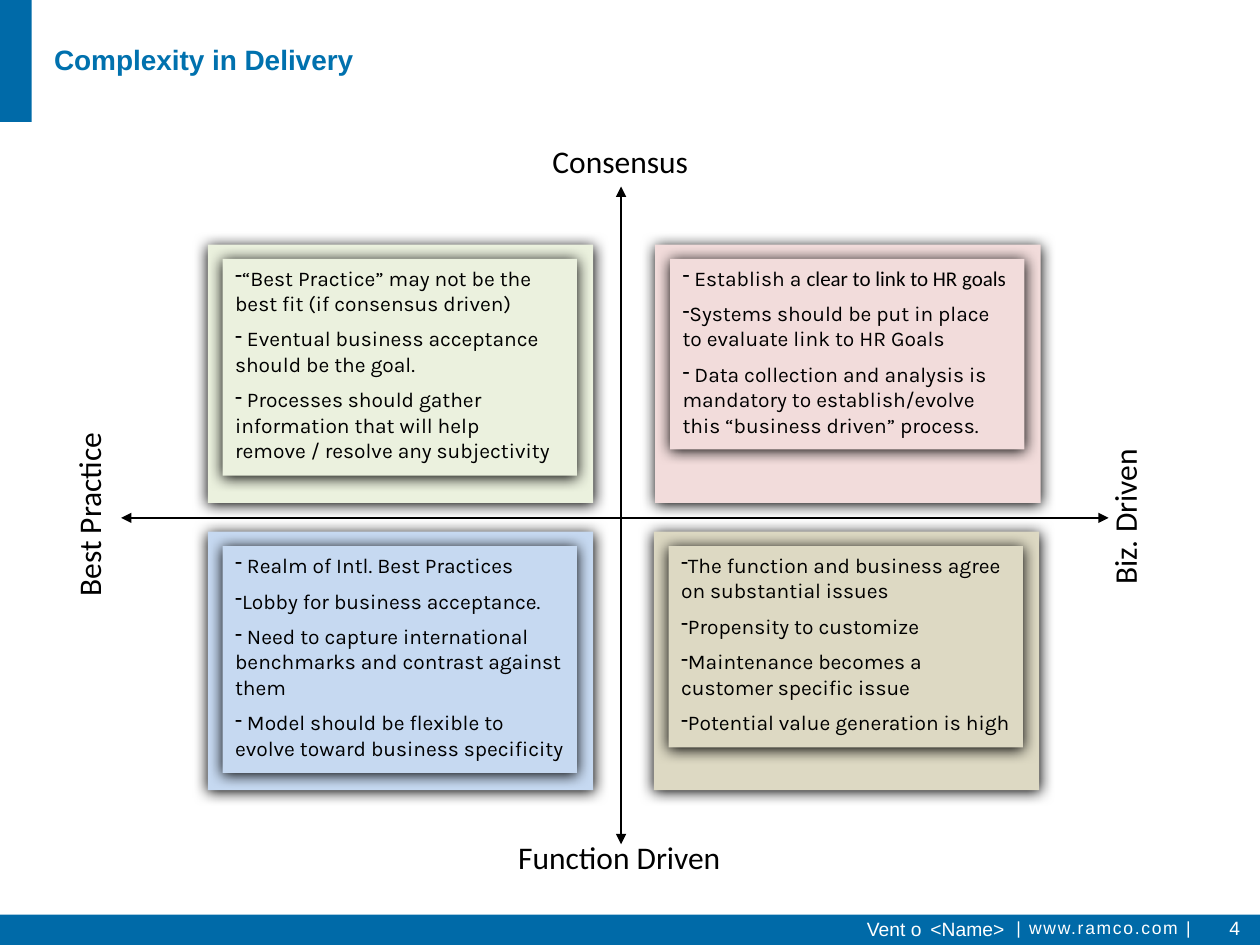
from dataclasses import dataclass

from lxml.etree import SubElement
from pptx import Presentation
from pptx.dml.color import RGBColor as Rgb
from pptx.enum.shapes import MSO_CONNECTOR as Connector, MSO_SHAPE as Shape
from pptx.enum.text import MSO_ANCHOR as Anchor, PP_ALIGN as Align
from pptx.oxml.ns import qn
from pptx.util import Cm, Pt


@dataclass(frozen=True)
class Theme:
    band = Rgb.from_string("006AA8")
    heading = Rgb.from_string("0071AE")
    white = Rgb.from_string("FFFFFF")
    black = Rgb.from_string("000000")
    green = Rgb.from_string("EBF1DE")
    pink = Rgb.from_string("F2DCDB")
    blue = Rgb.from_string("C6D9F1")
    tan = Rgb.from_string("DDD9C3")
    title_size = Pt(16)
    axis_size = Pt(18)
    body_size = Pt(12)
    footer_size = Pt(11)
    web_size = Pt(10)
    para_gap = Pt(6)


theme = Theme()


def add_span(para, text, font, size, color, bold=False, spacing=0):
    """Append one run; spacing is the letter spacing in points."""
    span = para.add_run()
    span.text = text
    span.font.name, span.font.size, span.font.bold = font, size, bold
    span.font.color.rgb = color
    if spacing:
        span.font._element.set("spc", str(spacing * 100))


def add_rect(shapes, left, top, width, height, color, shadow=False):
    """Add a borderless rectangle, with a soft shadow on request."""
    rect = shapes.add_shape(Shape.RECTANGLE, Cm(left), Cm(top), Cm(width), Cm(height))
    rect.fill.solid()
    rect.fill.fore_color.rgb = color
    rect.line.fill.background()
    rect.shadow.inherit = False
    if shadow:
        effects = rect.element.spPr.find(qn("a:effectLst"))
        outer = SubElement(effects, qn("a:outerShdw"), blurRad=str(Pt(8.5)),
                           dist=str(Pt(1)), dir="5400000", rotWithShape="0")
        SubElement(outer, qn("a:srgbClr"), val=str(theme.black))
    return rect


deck = Presentation()
deck.slide_width, deck.slide_height = Cm(25.4), Cm(19.05)
page = deck.slides.add_slide(deck.slide_layouts[6])

# Corner block and footer band
add_rect(page.shapes, 0, 0, 0.64, 2.46, theme.band)
add_rect(page.shapes, 0, 18.44, 25.4, 0.61, theme.band)

# Title, footer and axis labels: place, rotation, alignment, anchor, runs
footer = ("Arial", theme.footer_size, theme.white)
axis = ("Calibri", theme.axis_size, theme.black)
labels = [
    ((0.84, 0, 20.52, 2.41), 0, Align.LEFT, Anchor.MIDDLE,
     [("Complexity in Delivery", "Arial", theme.title_size, theme.heading, True)]),
    ((20.24, 18.36, 5.1, 0.74), 0, Align.LEFT, Anchor.TOP,
     [("| www.ramco.com |", "Arial", theme.web_size, theme.white, False, 1)]),
    ((14.58, 18.36, 5.92, 0.74), 0, Align.RIGHT, Anchor.TOP,
     [("Vent ", *footer), ("o ", *footer, False, 1), ("<Name>", *footer)]),
    ((24.18, 18.19, 1.07, 1.02), 0, Align.RIGHT, Anchor.MIDDLE, [("4", *footer)]),
    ((9.75, 2.74, 5.51, 1.02), 0, Align.CENTER, Anchor.TOP, [("Consensus", *axis)]),
    ((9.73, 16.76, 5.51, 1.02), 0, Align.CENTER, Anchor.TOP, [("Function Driven", *axis)]),
    ((-0.89, 9.86, 5.36, 1.02), 270, Align.CENTER, Anchor.TOP, [("Best Practice", *axis)]),
    ((19.99, 9.91, 5.36, 1.02), 270, Align.CENTER, Anchor.TOP, [("Biz. Driven", *axis)]),
]
for place, rotation, align, anchor, spans in labels:
    box = page.shapes.add_textbox(*map(Cm, place))
    box.rotation = rotation
    box.text_frame.word_wrap = True
    box.text_frame.vertical_anchor = anchor
    para = box.text_frame.paragraphs[0]
    para.alignment = align
    for span in spans:
        add_span(para, *span)

# Axes with an arrowhead at each end
for ends in [(2.44, 10.44, 22.35, 10.44), (12.52, 17.02, 12.52, 3.76)]:
    arrow = page.shapes.add_connector(Connector.STRAIGHT, *map(Cm, ends))
    arrow.line.color.rgb = theme.black
    arrow.line.width = Pt(0.75)
    line = arrow.element.spPr.find(qn("a:ln"))
    for end in ("a:headEnd", "a:tailEnd"):
        SubElement(line, qn(end), type="triangle")
    SubElement(arrow.element.spPr, qn("a:effectLst"))

# Quadrants: left, top, note height, colour, points (each a list of text and font)
quadrants = [
    (13.18, 10.72, 4.06, theme.tan, [
        [("The function and business agree on substantial issues", "Karla")],
        [("Propensity to customize", "Karla")],
        [("Maintenance becomes a customer specific issue", "Karla")],
        [("Potential value generation is high", "Karla")]]),
    (4.19, 10.72, 4.57, theme.blue, [
        [(" Realm of Intl. Best Practices", "Karla")],
        [("Lobby for business acceptance.", "Karla")],
        [(" Need to capture international benchmarks and contrast against them", "Karla")],
        [(" Model should be flexible to evolve toward business specificity", "Karla")]]),
    (4.19, 4.93, 4.37, theme.green, [
        [("“Best Practice” may not be the best fit (if consensus driven)", "Karla")],
        [(" Eventual business acceptance should be the goal.", "Karla")],
        [(" Processes should gather information that will help remove / resolve "
          "any subjectivity", "Karla")]]),
    (13.21, 4.93, 3.84, theme.pink, [
        [(" Establish a ", "Karla"), ("clear to link to HR goals", "Calibri")],
        [("Systems should be put in place to evaluate link to HR Goals", "Karla")],
        [(" Data collection and analysis is mandatory to establish/evolve this "
          "“business driven” process.", "Karla")]]),
]
for left, top, note_height, color, points in quadrants:
    quadrant = page.shapes.add_group_shape()
    add_rect(quadrant.shapes, left, top, 7.77, 5.21, color, shadow=True)
    note = add_rect(quadrant.shapes, left + 0.3, top + 0.29, 7.14, note_height, color, shadow=True)
    frame = note.text_frame
    frame.word_wrap = True
    frame.vertical_anchor = Anchor.TOP
    for index, spans in enumerate(points):
        para = frame.add_paragraph() if index else frame.paragraphs[0]
        para.alignment = Align.LEFT
        if index:
            para.space_before = theme.para_gap
        SubElement(para._p.get_or_add_pPr(), qn("a:buChar"), char="-")
        for text, font in spans:
            add_span(para, text, font, theme.body_size, theme.black)

deck.save("out.pptx")
